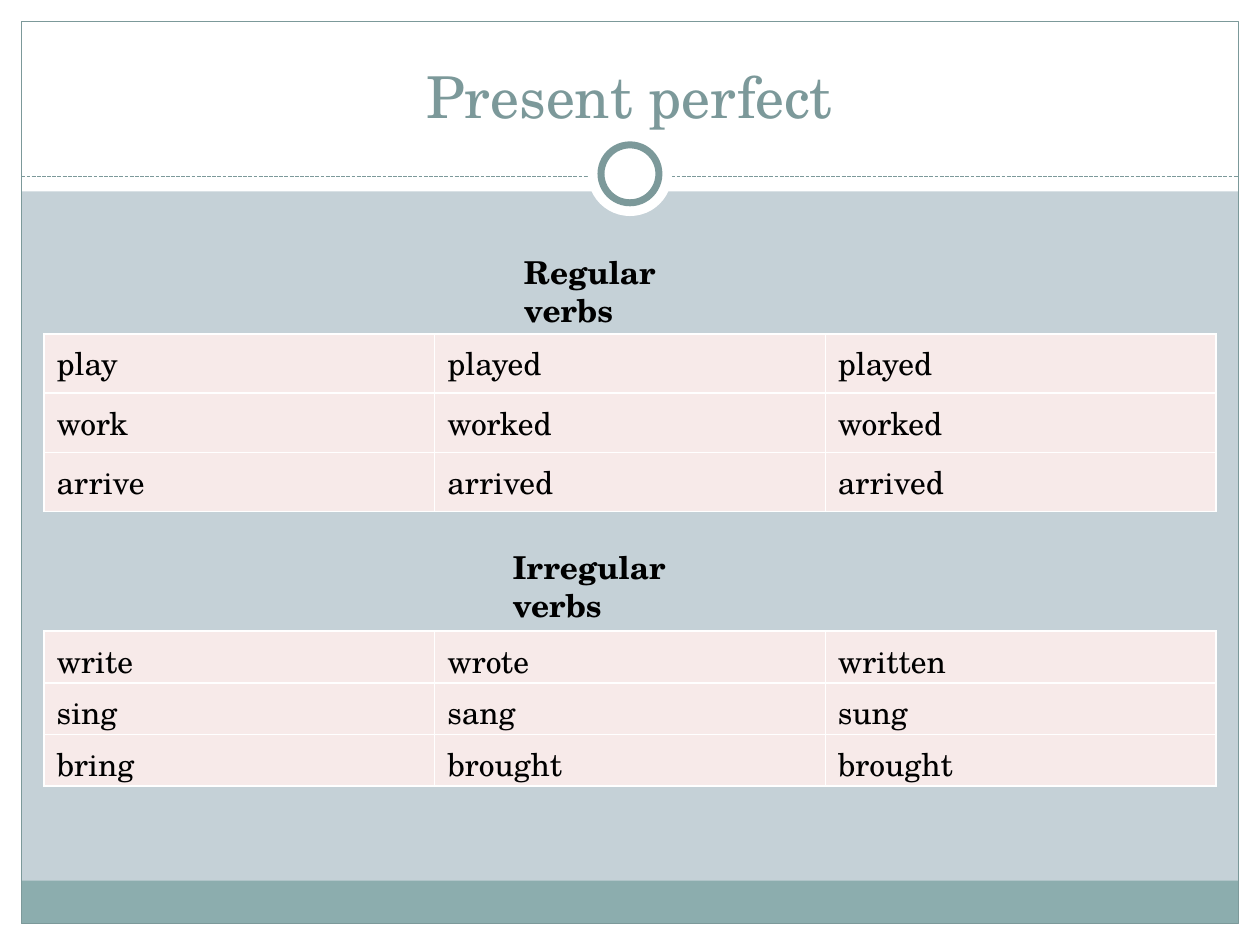
from dataclasses import dataclass

from lxml import etree
from pptx import Presentation
from pptx.dml.color import RGBColor
from pptx.enum.dml import MSO_LINE
from pptx.enum.shapes import MSO_CONNECTOR, MSO_SHAPE
from pptx.enum.text import MSO_ANCHOR, MSO_AUTO_SIZE, PP_ALIGN
from pptx.oxml import parse_xml
from pptx.oxml.ns import nsdecls, qn
from pptx.slide import Slide
from pptx.text.text import _Paragraph as Paragraph
from pptx.util import Inches, Pt

RECT, OVAL = MSO_SHAPE.RECTANGLE, MSO_SHAPE.OVAL
COLORS = {
    "background": "C5D1D7",
    "white": "FFFFFF",
    "footer": "8CADAE",
    "accent": "7C999A",
    "cell": "F7EAE9",
    "text": "000000",
}
FONT = "TeX Gyre Schola"
WIDTH, HEIGHT = 10, 7.5
MARGIN = 0.17
INNER_WIDTH, INNER_HEIGHT = WIDTH - 2 * MARGIN, HEIGHT - 2 * MARGIN
HEADER_HEIGHT, RULE_TOP, FOOTER_HEIGHT = 1.52, 1.4, 0.34
RING_CENTER = (WIDTH / 2, 1.38)
TABLE_LEFT, COLUMN_WIDTH = 0.35, 3.1


@dataclass
class Panel:
    left: float
    top: float
    width: float
    height: float
    fill: str | None = "white"
    line_width: float = 0
    kind: MSO_SHAPE = RECT


@dataclass
class VerbGroup:
    heading: str
    heading_left: float
    heading_top: float
    heading_width: float
    table_top: float
    row_height: float
    verbs: list[tuple[str, str, str]]


def circle(diameter: float, line_width: float = 0) -> Panel:
    center_x, center_y = RING_CENTER
    return Panel(center_x - diameter / 2, center_y - diameter / 2,
                 diameter, diameter, "white", line_width, OVAL)


PANELS = [
    Panel(0, HEIGHT - MARGIN, WIDTH, MARGIN),
    Panel(0, 0, WIDTH, HEADER_HEIGHT),
    Panel(0, 0, MARGIN, HEIGHT),
    Panel(WIDTH - MARGIN, 0, MARGIN, HEIGHT),
    Panel(MARGIN, HEIGHT - MARGIN - FOOTER_HEIGHT, INNER_WIDTH, FOOTER_HEIGHT, "footer"),
    Panel(MARGIN, MARGIN, INNER_WIDTH, INNER_HEIGHT, None, 0.75),
]
RINGS = [circle(0.67), circle(0.46, 4)]

GROUPS = [
    VerbGroup("Regular verbs", 4.06, 1.96, 1.9, 2.65, 0.47, [
        ("play", "played", "played"),
        ("work", "worked", "worked"),
        ("arrive", "arrived", "arrived"),
    ]),
    VerbGroup("Irregular verbs", 3.97, 4.3, 2.1, 5.01, 0.41, [
        ("write", "wrote", "written"),
        ("sing", "sang", "sung"),
        ("bring", "brought", "brought"),
    ]),
]


def color(name: str) -> RGBColor:
    return RGBColor.from_string(COLORS[name])


def set_font(para: Paragraph, size: float, color_name: str = "text", bold: bool = False) -> None:
    font = para.font
    font.name, font.size, font.bold = FONT, Pt(size), bold
    font.color.rgb = color(color_name)


def draw_panel(page: Slide, panel: Panel) -> None:
    shape = page.shapes.add_shape(panel.kind, Inches(panel.left), Inches(panel.top),
                                  Inches(panel.width), Inches(panel.height))
    shape.shadow.inherit = False
    if panel.fill:
        shape.fill.solid()
        shape.fill.fore_color.rgb = color(panel.fill)
    else:
        shape.fill.background()
    if panel.line_width:
        shape.line.color.rgb = color("accent")
        shape.line.width = Pt(panel.line_width)
    else:
        shape.line.fill.background()


def draw_rule(page: Slide) -> None:
    rule = page.shapes.add_connector(MSO_CONNECTOR.STRAIGHT, Inches(MARGIN), Inches(RULE_TOP),
                                     Inches(WIDTH - MARGIN), Inches(RULE_TOP))
    rule.line.color.rgb = color("accent")
    rule.line.width = Pt(0.75)
    rule.line.dash_style = MSO_LINE.SQUARE_DOT
    etree.SubElement(rule._element.spPr, qn("a:effectLst"))


def set_title(page: Slide, text: str) -> None:
    title = page.shapes.title
    title.left, title.top = Inches(0.33), Inches(0.25)
    title.width, title.height = Inches(9.33), Inches(0.83)
    frame = title.text_frame
    frame.text = text
    frame.auto_size = MSO_AUTO_SIZE.NONE
    frame.vertical_anchor = MSO_ANCHOR.BOTTOM
    frame.paragraphs[0].alignment = PP_ALIGN.CENTER
    set_font(frame.paragraphs[0], 33, "accent")
    page.shapes._spTree.append(title._element)  # in front of the header panel


def add_borders(cell) -> None:
    properties = cell._tc.get_or_add_tcPr()
    for index, side in enumerate(("lnL", "lnR", "lnT", "lnB")):
        properties.insert(index, parse_xml(
            f'<a:{side} {nsdecls("a")} w="12700"><a:solidFill>'
            f'<a:srgbClr val="{COLORS["white"]}"/></a:solidFill></a:{side}>'))


def draw_group(page: Slide, group: VerbGroup) -> None:
    box = page.shapes.add_textbox(Inches(group.heading_left), Inches(group.heading_top),
                                  Inches(group.heading_width), Inches(0.4))
    box.text_frame.word_wrap = True
    box.text_frame.text = group.heading
    set_font(box.text_frame.paragraphs[0], 18, bold=True)

    row_count, column_count = len(group.verbs), len(group.verbs[0])
    table = page.shapes.add_table(
        row_count, column_count, Inches(TABLE_LEFT), Inches(group.table_top),
        Inches(column_count * COLUMN_WIDTH), Inches(row_count * group.row_height)).table
    table.first_row = table.horz_banding = False
    for row, forms in zip(table.rows, group.verbs):
        for cell, form in zip(row.cells, forms):
            cell.text = form
            cell.fill.solid()
            cell.fill.fore_color.rgb = color("cell")
            set_font(cell.text_frame.paragraphs[0], 18)
            add_borders(cell)


def main() -> None:
    deck = Presentation()
    deck.slide_width, deck.slide_height = Inches(WIDTH), Inches(HEIGHT)
    page = deck.slides.add_slide(deck.slide_layouts.get_by_name("Title Only"))
    page.background.fill.solid()
    page.background.fill.fore_color.rgb = color("background")
    for panel in PANELS:
        draw_panel(page, panel)
    draw_rule(page)
    for ring in RINGS:
        draw_panel(page, ring)
    set_title(page, "Present perfect")
    for group in GROUPS:
        draw_group(page, group)
    deck.save("out.pptx")


if __name__ == "__main__":
    main()
